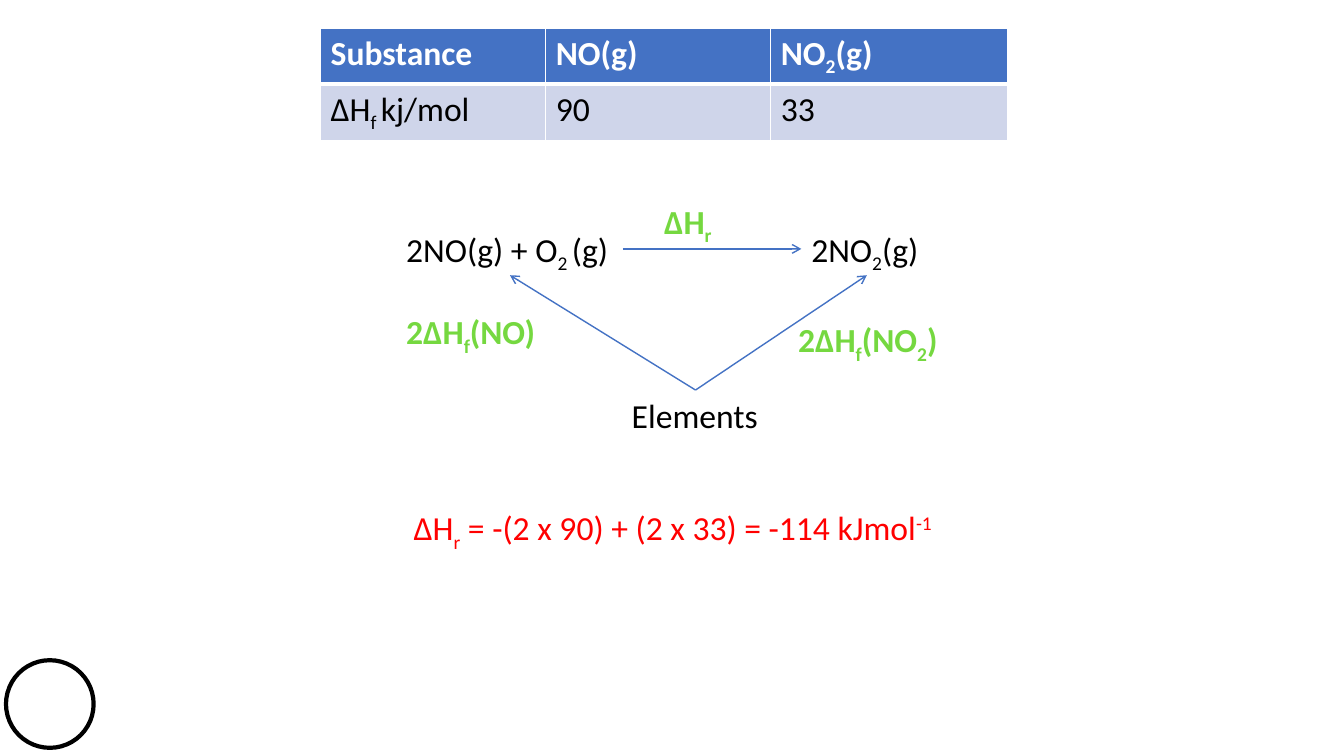
from lxml import etree
from pptx import Presentation
from pptx.dml.color import RGBColor
from pptx.enum.shapes import MSO_CONNECTOR, MSO_SHAPE
from pptx.enum.text import PP_ALIGN
from pptx.oxml.ns import qn
from pptx.util import Pt

STRAIGHT = MSO_CONNECTOR.STRAIGHT
OVAL = MSO_SHAPE.OVAL
LEFT, CENTER = PP_ALIGN.LEFT, PP_ALIGN.CENTER

BLACK = RGBColor(0x00, 0x00, 0x00)
WHITE = RGBColor(0xFF, 0xFF, 0xFF)
BLUE = RGBColor(0x44, 0x72, 0xC4)
PALE_BLUE = RGBColor(0xCF, 0xD5, 0xEA)
GREEN = RGBColor(0x75, 0xD8, 0x40)
RED = RGBColor(0xFF, 0x00, 0x00)

FONT, FONT_SIZE = "Calibri", 24
SUB, SUPER = -25000, 30000

# Content: a formula is a list of (text, baseline shift)
ENTHALPIES = [
    [[("Substance", 0)], [("NO(g)", 0)], [("NO", 0), ("2", SUB), ("(g)", 0)]],
    [[("ΔH", 0), ("f ", SUB), ("kj/mol", 0)], [("90", 0)], [("33", 0)]],
]
TABLE_LEFT, TABLE_TOP, ROW_HEIGHT = 229, 20.2, 40
COLUMN_WIDTHS = [160.8, 160.8, 169.4]
# Row style: fill, text colour, bold, bottom border width
ROW_STYLES = [(BLUE, WHITE, True, 3), (PALE_BLUE, BLACK, False, 1)]

# Left, top, width, height, colour, bold, alignment, formula
LABELS = [
    (283, 160, 161.3, 36, BLACK, False, LEFT,
     [("2NO(g) + O", 0), ("2 ", SUB), ("(g)", 0)]),
    (572.4, 160, 92.9, 36, BLACK, False, LEFT,
     [("2NO", 0), ("2", SUB), ("(g)", 0)]),
    (444.2, 278.6, 105.8, 36, BLACK, False, LEFT, [("Elements", 0)]),
    (467.3, 139.7, 49.7, 36, GREEN, True, LEFT, [("ΔH", 0), ("r", SUB)]),
    (283, 218.9, 108.7, 36, GREEN, True, LEFT,
     [("2ΔH", 0), ("f", SUB), ("(NO)", 0)]),
    (563, 224.6, 121, 36, GREEN, True, LEFT,
     [("2ΔH", 0), ("f", SUB), ("(NO", 0), ("2", SUB), (")", 0)]),
    (285.8, 358.6, 389.5, 65.5, RED, False, CENTER,
     [("ΔH", 0), ("r", SUB), (" = -(2 x 90) + (2 x 33) = -114 kJmol", 0),
      ("-1", SUPER)]),
]

ELEMENTS_TOP = (496.8, 278.6)
ARROWS = [
    ((445, 177.8), (572.4, 177.8)),
    (ELEMENTS_TOP, (364.3, 196.6)),
    (ELEMENTS_TOP, (619.2, 196.6)),
]
CIRCLE_LEFT, CIRCLE_TOP, CIRCLE_SIZE = 4.3, 471.6, 62.6


def write_formula(paragraph, formula, colour, bold):
    for text, shift in formula:
        run = paragraph.add_run()
        run.text = text
        run.font.name = FONT
        run.font.size = Pt(FONT_SIZE)
        run.font.bold = bold
        run.font.color.rgb = colour
        if shift:
            run._r.get_or_add_rPr().set("baseline", str(shift))


def add_borders(cell, widths):
    properties = cell._tc.get_or_add_tcPr()
    for side, width in widths.items():
        border = etree.SubElement(properties, qn("a:ln" + side), w=str(Pt(width)))
        fill = etree.SubElement(border, qn("a:solidFill"))
        etree.SubElement(fill, qn("a:srgbClr"), val=str(WHITE))


prs = Presentation()
prs.slide_width, prs.slide_height = Pt(960), Pt(540)
slide = prs.slides.add_slide(prs.slide_layouts[6])
shapes = slide.shapes

# Circle in the corner
circle = shapes.add_shape(OVAL, Pt(CIRCLE_LEFT), Pt(CIRCLE_TOP),
                          Pt(CIRCLE_SIZE), Pt(CIRCLE_SIZE))
circle.shadow.inherit = False
circle.fill.solid()
circle.fill.fore_color.rgb = WHITE
circle.line.color.rgb = BLACK
circle.line.width = Pt(3)

# Arrows of the enthalpy cycle
for start, end in ARROWS:
    arrow = shapes.add_connector(STRAIGHT, *map(Pt, start + end))
    arrow.line.color.rgb = BLUE
    arrow.line.width = Pt(1)
    etree.SubElement(arrow.line._get_or_add_ln(), qn("a:tailEnd"), type="arrow")
    etree.SubElement(arrow._element.spPr, qn("a:effectLst"))

# Formulas and labels
for left, top, width, height, colour, bold, alignment, formula in LABELS:
    label = shapes.add_textbox(Pt(left), Pt(top), Pt(width), Pt(height))
    label.text_frame.word_wrap = False
    paragraph = label.text_frame.paragraphs[0]
    paragraph.alignment = alignment
    write_formula(paragraph, formula, colour, bold)

# Table of formation enthalpies
table = shapes.add_table(
    len(ENTHALPIES), len(COLUMN_WIDTHS), Pt(TABLE_LEFT), Pt(TABLE_TOP),
    Pt(sum(COLUMN_WIDTHS)), Pt(ROW_HEIGHT * len(ENTHALPIES))).table
for column, width in zip(table.columns, COLUMN_WIDTHS):
    column.width = Pt(width)
top_border = 1
for row, formulas, style in zip(table.rows, ENTHALPIES, ROW_STYLES):
    fill, colour, bold, bottom_border = style
    row.height = Pt(ROW_HEIGHT)
    for cell, formula in zip(row.cells, formulas):
        add_borders(cell, {"L": 1, "R": 1, "T": top_border, "B": bottom_border})
        cell.fill.solid()
        cell.fill.fore_color.rgb = fill
        write_formula(cell.text_frame.paragraphs[0], formula, colour, bold)
    top_border = bottom_border

prs.save("out.pptx")
